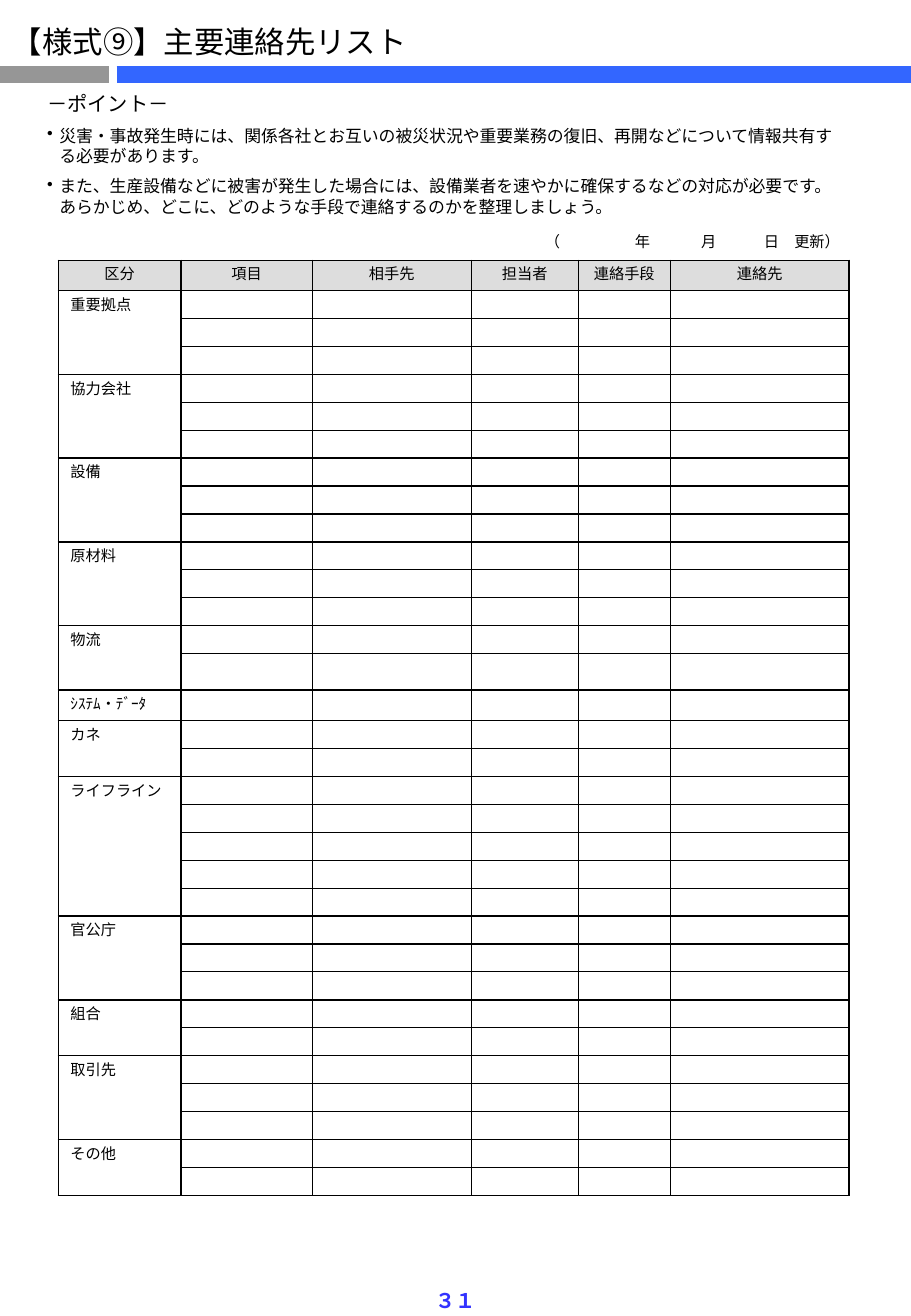
from lxml.etree import SubElement
from pptx import Presentation
from pptx.dml.color import RGBColor
from pptx.enum.shapes import MSO_CONNECTOR
from pptx.enum.text import MSO_AUTO_SIZE, PP_ALIGN
from pptx.oxml import parse_xml
from pptx.oxml.ns import nsdecls, qn
from pptx.util import Inches, Pt

FONT = "Noto Sans CJK JP"
NO_STYLE = "{2D5ABB26-0587-4C30-8999-92F81FD0307C}"


def color(value):
    return RGBColor.from_string(value)


def write(para, text, size, ink="000000", align=PP_ALIGN.LEFT):
    para.text = text
    para.alignment = align
    para.line_spacing = Pt(size * 1.2)
    para.font.size = Pt(size)
    para.font.name = FONT
    para.font.color.rgb = color(ink)
    SubElement(para.font._element, qn("a:ea"), typeface=FONT)


deck = Presentation()
deck.slide_width, deck.slide_height = Inches(7.5), Inches(10.83)
page = deck.slides.add_slide(deck.slide_layouts[6])

# Rule under the title
for start, end, ink in [(0, 0.9, "969696"), (0.96, 7.5, "3366FF")]:
    rule = page.shapes.add_connector(
        MSO_CONNECTOR.STRAIGHT, Inches(start), Inches(0.61), Inches(end), Inches(0.61))
    rule.line.color.rgb = color(ink)
    rule.line.width = Pt(10)
    SubElement(rule._element.spPr, qn("a:effectLst"))

# Title and page number
for text, left, top, width, height, size, ink, align, bold in [
    ("【様式⑨】主要連絡先リスト", 0, 0.14, 3.48, 0.4, 18, "000000", PP_ALIGN.LEFT, False),
    ("３１", 3.48, 10.55, 0.54, 0.31, 12, "3333FF", PP_ALIGN.CENTER, True),
]:
    box = page.shapes.add_textbox(Inches(left), Inches(top), Inches(width), Inches(height))
    box.text_frame.word_wrap = False
    box.text_frame.auto_size = MSO_AUTO_SIZE.SHAPE_TO_FIT_TEXT
    para = box.text_frame.paragraphs[0]
    write(para, text, size, ink, align)
    para.font.bold = bold

# Points to note
points = [
    "－ポイント－",
    "災害・事故発生時には、関係各社とお互いの被災状況や重要業務の復旧、再開などについて情報共有する必要があります。",
    "また、生産設備などに被害が発生した場合には、設備業者を速やかに確保するなどの対応が必要です。"
    "あらかじめ、どこに、どのような手段で連絡するのかを整理しましょう。",
]
box = page.shapes.add_textbox(Inches(0.29), Inches(0.7), Inches(6.77), Inches(1.14))
frame = box.text_frame
frame.word_wrap = True
frame.auto_size = MSO_AUTO_SIZE.SHAPE_TO_FIT_TEXT
for index, text in enumerate(points):
    para = frame.add_paragraph() if index else frame.paragraphs[0]
    write(para, text, 10 if index else 12)
    para.space_after = Pt(6)
    properties = para._p.get_or_add_pPr()
    properties.set("marL", str(Inches(0.1)))
    properties.set("indent", str(Inches(-0.1)))
    if index:
        bullet = parse_xml(f'<a:buChar {nsdecls("a")} char="•"/>')
        para.font._element.addprevious(bullet)

# Contact list and update date: contents and sizes
headings = ["区分", "項目", "相手先", "担当者", "連絡手段", "連絡先"]
groups = [
    ("重要拠点", 3), ("協力会社", 3), ("設備", 3), ("原材料", 3), ("物流", 2),
    ("ｼｽﾃﾑ・ﾃﾞｰﾀ", 1), ("カネ", 2), ("ライフライン", 5), ("官公庁", 3),
    ("組合", 2), ("取引先", 3), ("その他", 2),
]
contact_rows = [headings]
group_starts = {}
for name, count in groups:
    group_starts[len(contact_rows)] = count
    contact_rows += [[name] + [""] * 5] + [[""] * 6 for _ in range(count - 1)]
contact_heights = [0.23] * len(contact_rows)
contact_heights[0] = contact_heights[15] = 0.25
contact_heights[14] = 0.3
date_row = ["（", "", "年", "", "月", "", "日　更新）"]

tables = []
for left, top, widths, heights, rows, side in [
    (0.48, 2.14, [1.01, 1.08, 1.31, 0.88, 0.76, 1.47], contact_heights, contact_rows, 0.1),
    (4.22, 1.87, [0.39, 0.59, 0.18, 0.39, 0.13, 0.39, 0.76], [0.23], [date_row], 0),
]:
    holder = page.shapes.add_table(
        len(rows), len(widths), Inches(left), Inches(top),
        Inches(sum(widths)), Inches(sum(heights)))
    table = holder.table
    table.first_row = table.horz_banding = False
    table._tbl.tblPr.find(qn("a:tableStyleId")).text = NO_STYLE
    for column, width in zip(table.columns, widths):
        column.width = Inches(width)
    for row, height in zip(table.rows, heights):
        row.height = Inches(height)
    for r, texts in enumerate(rows):
        for c, text in enumerate(texts):
            cell = table.cell(r, c)
            cell.margin_left = cell.margin_right = Inches(side)
            cell.margin_top = Inches(0.05 if text else 0.02)
            cell.margin_bottom = Inches(0.03 if text else 0.02)
            align = PP_ALIGN.CENTER if r == 0 else PP_ALIGN.LEFT
            write(cell.text_frame.paragraphs[0], text, 9, align=align)
    tables.append(table)
contacts, update = tables

# Alignment around the blanks in the date
update.cell(0, 0).text_frame.paragraphs[0].alignment = PP_ALIGN.RIGHT
update.cell(0, 6).text_frame.paragraphs[0].alignment = PP_ALIGN.LEFT

# Contact list: heavier lines between groups and round the sides
last_row, last_column = len(contact_rows), len(headings)
line_weights = []
for r in range(last_row + 1):
    heavy = r in group_starts or r == last_row
    weights = [1 if heavy else 0.75] * last_column
    if r == 2:
        weights[1:4] = [1] * 3
    line_weights.append(weights)

for r in range(last_row):
    for c in range(last_column):
        cell = contacts.cell(r, c)
        borders = [
            ("a:lnL", 1 if c == 0 else 0.75),
            ("a:lnR", 1 if c == last_column - 1 else 0.75),
            ("a:lnT", line_weights[r][c]),
            ("a:lnB", 1 if c == 0 else line_weights[r + 1][c]),
        ]
        for tag, weight in borders:
            line = SubElement(cell._tc.get_or_add_tcPr(), qn(tag), w=str(Pt(weight)))
            SubElement(SubElement(line, qn("a:solidFill")), qn("a:srgbClr"), val="000000")
        if r == 0:
            cell.fill.solid()
            cell.fill.fore_color.rgb = color("DDDDDD")
        else:
            cell.fill.background()

for start, count in group_starts.items():
    if count > 1:
        contacts.cell(start, 0).merge(contacts.cell(start + count - 1, 0))

deck.save("out.pptx")
